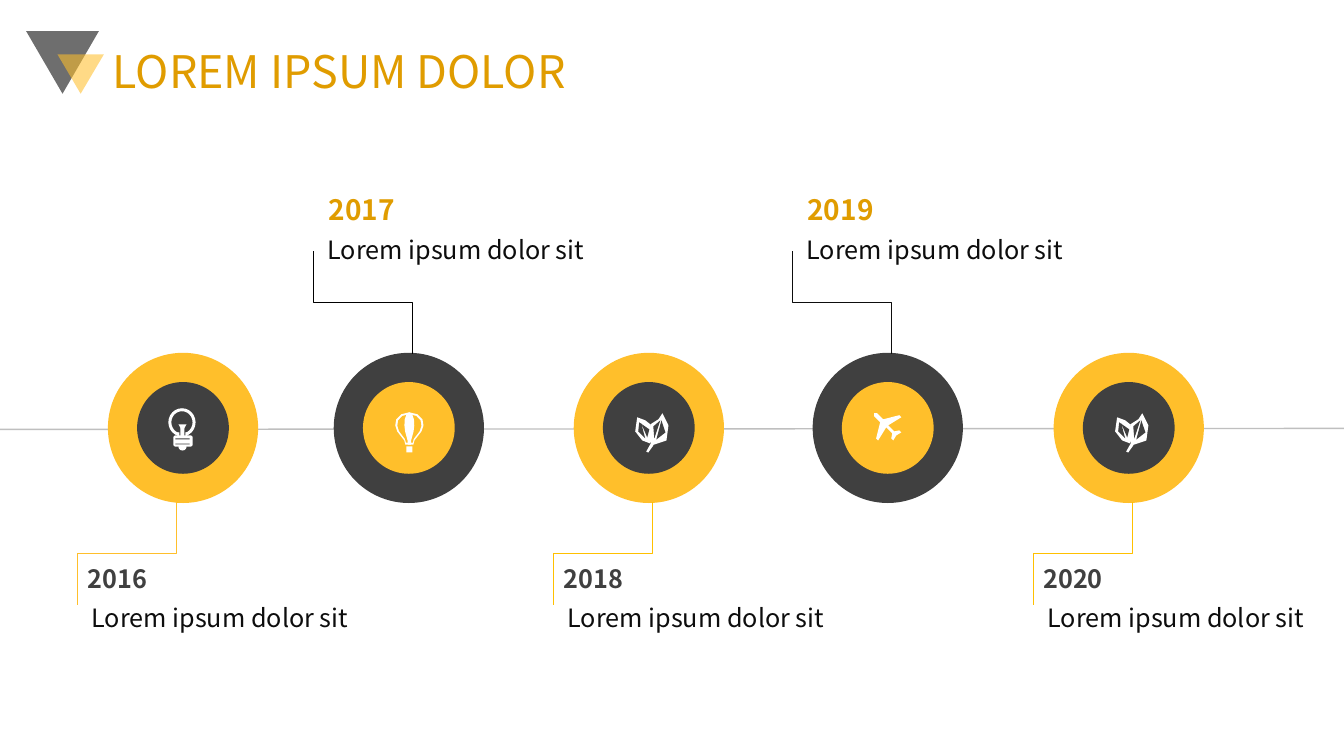
from lxml.etree import SubElement
from pptx import Presentation
from pptx.dml.color import RGBColor
from pptx.enum.shapes import MSO_CONNECTOR as Connector, MSO_SHAPE as Preset
from pptx.enum.text import MSO_ANCHOR as Anchor
from pptx.oxml.ns import qn
from pptx.util import Inches, Pt

# Content
TITLE = "LOREM IPSUM DOLOR"
DESCRIPTION = "Lorem ipsum dolor sit"
FONT = "Noto Sans CJK JP"
COLORS = {
    "yellow": "FFBF2B", "gold": "FFC000", "amber": "E09C00", "dark": "404040",
    "ink": "0D0D0D", "black": "000000", "grey": "BFBFBF", "white": "FFFFFF",
}

# Year, side, ring left, icon, leader colour, shift of the label
EVENTS = [
    ("2016", "below", 1.07, "bulb", "yellow", -0.1),
    ("2017", "above", 3.31, "balloon", "black", 0),
    ("2018", "below", 5.69, "leaves", "gold", 0),
    ("2019", "above", 8.06, "plane", "ink", 0),
    ("2020", "below", 10.45, "leaves", "gold", 0),
]
SIDES = {
    "above": {"ring": "dark", "core": "yellow", "year": "amber", "size": 20,
              "year_dx": -0.15, "year_top": 1.9, "text_top": 2.28, "leader_top": 2.49},
    "below": {"ring": "yellow", "core": "dark", "year": "dark", "size": 18,
              "year_dx": -0.2, "year_top": 5.57, "text_top": 5.93, "leader_top": 4.98},
}

# Icon outlines, in hundredths of an inch
BALLOON_HALF = [(0, 0), (8, 2), (13, 7), (14, 13), (12, 19), (5, 28), (4, 32)]
PLANE_HALF = [(1, 1), (4, 1), (10, 7), (26, 3), (28, 5), (15, 13), (21, 19),
              (26, 18), (28, 20), (23, 23)]
LEAVES = [
    ("white", [(3, 4), (11, 7), (16, 11), (19, 20), (16, 30), (8, 27), (1, 18)]),
    ("white", [(28, 0), (34, 12), (32, 27), (17, 32), (16, 11), (24, 6)]),
    ("white", [(17, 29), (19, 32), (14, 39), (12, 38)]),
    ("core", [(5, 9), (15, 16), (13, 24), (7, 10), (11, 25), (4, 18)]),
    ("core", [(26, 7), (20, 25), (19, 13)]),
    ("core", [(27, 7), (31, 19), (22, 26)]),
]

# Layout, in inches
WIDTH, HEIGHT = 13.33, 7.5
RING, CORE, RING_TOP = 1.49, 0.91, 3.5
LEADER_WIDTH, LEADER_HEIGHT = 0.98, 1.02
LEADER_DX, TEXT_DX = -0.2, -0.16

presentation = Presentation()
presentation.slide_width, presentation.slide_height = Inches(WIDTH), Inches(HEIGHT)
slide = presentation.slides.add_slide(presentation.slide_layouts[6])
shapes = slide.shapes


def rgb(name):
    return RGBColor.from_string(COLORS[name])


def paint(shape, color):
    shape.shadow.inherit = False
    shape.fill.solid()
    shape.fill.fore_color.rgb = rgb(color)
    shape.line.fill.background()


def add_preset(preset, left, top, width, height, color):
    shape = shapes.add_shape(preset, *map(Inches, (left, top, width, height)))
    paint(shape, color)
    return shape


def add_triangle(left, top, width, height, color):
    shape = add_preset(Preset.ISOSCELES_TRIANGLE, left, top, width, height, color)
    shape.rotation = 180
    fill_color = shape._element.spPr.find(".//" + qn("a:srgbClr"))
    SubElement(fill_color, qn("a:alpha"), val="57000")


def add_line(kind, start, end, color, weight):
    line = shapes.add_connector(kind, *map(Inches, start + end))
    line.line.color.rgb = rgb(color)
    line.line.width = Pt(weight)
    SubElement(line._element.spPr, qn("a:effectLst"))
    return line


def add_leader(left, top, side, color):
    """Elbow that leaves and arrives vertically, so its box is turned."""
    x, y = left + LEADER_WIDTH / 2, top + LEADER_HEIGHT / 2
    half_w, half_h = LEADER_HEIGHT / 2, LEADER_WIDTH / 2
    if side == "above":
        half_w = -half_w
    leader = add_line(Connector.ELBOW, (x - half_w, y - half_h),
                      (x + half_w, y + half_h), color, 0.5)
    leader._element.spPr.xfrm.rot = 270 if side == "above" else 90


def add_polygon(points, left, top, color):
    corners = [(Inches(left + x / 100), Inches(top + y / 100)) for x, y in points]
    builder = shapes.build_freeform(*corners[0])
    builder.add_line_segments(corners[1:], close=True)
    paint(builder.convert_to_shape(), color)


def draw_bulb(left, top, core):
    middle = left + 0.14
    glass = add_preset(Preset.DONUT, left, top, 0.27, 0.28, "white")
    glass.adjustments[0] = 0.11
    add_preset(Preset.RECTANGLE, middle - 0.05, top + 0.24, 0.1, 0.06, "white")
    add_preset(Preset.RECTANGLE, middle - 0.03, top + 0.22, 0.06, 0.06, core)
    add_preset(Preset.FLOWCHART_MERGE, middle - 0.04, top + 0.16, 0.08, 0.07, "white")
    add_preset(Preset.RECTANGLE, middle - 0.02, top + 0.19, 0.04, 0.1, "white")
    add_preset(Preset.OVAL, middle - 0.04, top + 0.35, 0.08, 0.07, "white")
    add_preset(Preset.ROUNDED_RECTANGLE, middle - 0.09, top + 0.27, 0.19, 0.11, "white")
    for row in range(2):
        add_preset(Preset.RECTANGLE, middle - 0.07, top + 0.3 + row * 0.05, 0.14, 0.01,
                   core)


def draw_balloon(left, top, core):
    middle = left + 0.15
    envelope = BALLOON_HALF + [(-x, y) for x, y in reversed(BALLOON_HALF[1:])]
    for x_scale, y_scale, color in ((1, 1, "white"), (0.85, 0.88, core), (0.35, 1, "white")):
        add_polygon([(x * x_scale, y * y_scale) for x, y in envelope], middle,
                    top + 0.16 * (1 - y_scale), color)
    add_preset(Preset.RECTANGLE, middle - 0.03, top + 0.34, 0.06, 0.06, "white")


def draw_leaves(left, top, core):
    for color, points in LEAVES:
        add_polygon(points, left, top, core if color == "core" else color)


def draw_plane(left, top, core):
    outline = PLANE_HALF + [(y, x) for x, y in reversed(PLANE_HALF[1:-1])]
    add_polygon(outline, left, top, "white")


DRAW_ICON = {"bulb": draw_bulb, "balloon": draw_balloon, "leaves": draw_leaves,
             "plane": draw_plane}
ICON_TOP = {"bulb": 0.55, "balloon": 0.59, "leaves": 0.6, "plane": 0.59}


def add_text(text, left, top, width, height, size, color, bold=False,
             spacing=None, anchor=Anchor.TOP):
    frame = shapes.add_textbox(*map(Inches, (left, top, width, height))).text_frame
    frame.word_wrap = True
    frame.vertical_anchor = anchor
    paragraph = frame.paragraphs[0]
    paragraph.text = text
    paragraph.line_spacing = spacing
    font = paragraph.runs[0].font
    font.name, font.size, font.bold = FONT, Pt(size), bold
    font.color.rgb = rgb(color)


# Header
add_triangle(0.26, 0.31, 0.72, 0.62, "black")
add_triangle(0.57, 0.54, 0.46, 0.39, "yellow")
add_text(TITLE, 1.02, 0.31, 11.5, 0.85, size=32, color="amber", spacing=0.9,
         anchor=Anchor.MIDDLE)

# Timeline
add_line(Connector.STRAIGHT, (0, 4.26), (WIDTH, 4.25), "grey", 1)
inset = (RING - CORE) / 2
for year, side, left, icon, leader_color, shift in EVENTS:
    style = SIDES[side]
    label_left = left + shift
    add_preset(Preset.FLOWCHART_CONNECTOR, left, RING_TOP, RING, RING, style["ring"])
    add_preset(Preset.FLOWCHART_CONNECTOR, left + inset, RING_TOP + inset, CORE, CORE,
               style["core"])
    add_leader(label_left + LEADER_DX, style["leader_top"], side, leader_color)
    DRAW_ICON[icon](left + 0.6, RING_TOP + ICON_TOP[icon], style["core"])
    add_text(year, label_left + style["year_dx"], style["year_top"], 1.52, 0.42,
             size=style["size"], color=style["year"], bold=True, spacing=0.9)
    add_text(DESCRIPTION, label_left + TEXT_DX, style["text_top"], 2.79, 0.71, size=18,
             color="ink")

presentation.save("out.pptx")
